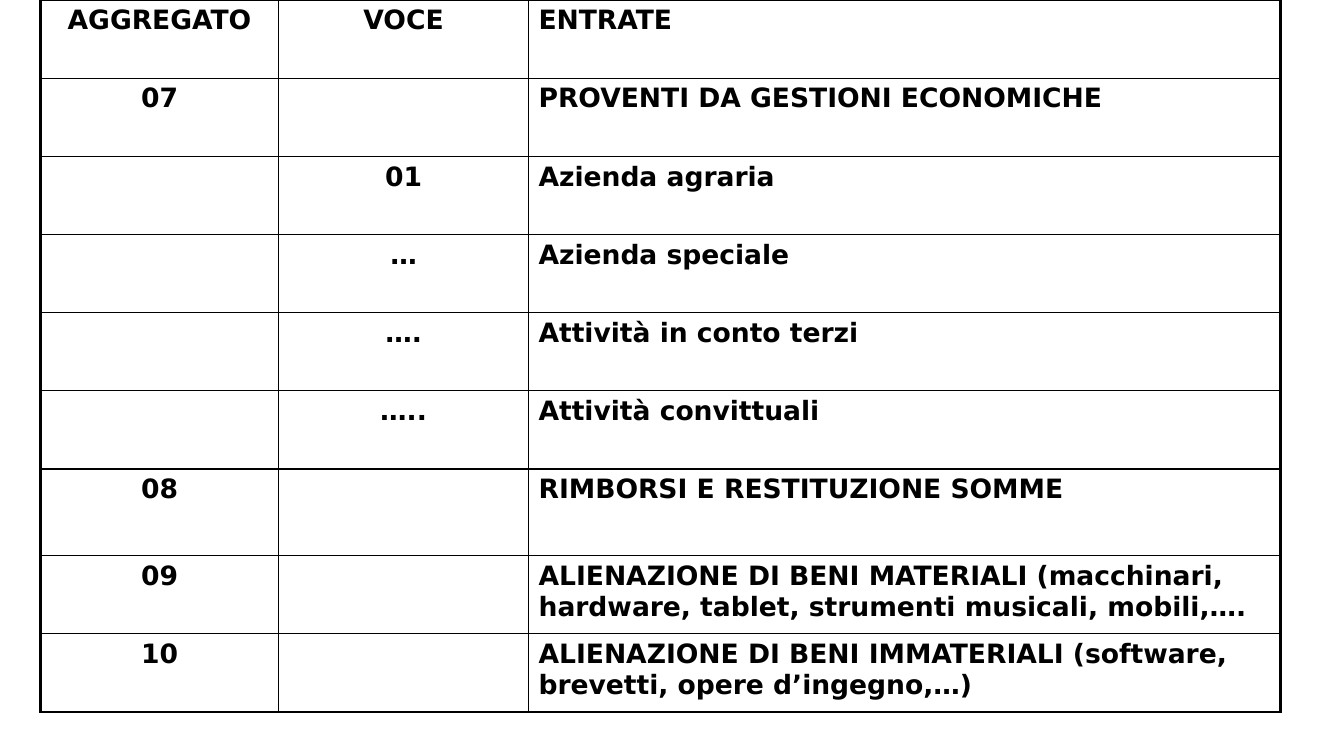
from lxml import etree
from pptx import Presentation
from pptx.dml.color import RGBColor
from pptx.enum.text import PP_ALIGN
from pptx.oxml.ns import qn
from pptx.util import Cm, Pt

CENTER = PP_ALIGN.CENTER
LEFT = PP_ALIGN.LEFT
BLACK = RGBColor(0x00, 0x00, 0x00)
WHITE = RGBColor(0xFF, 0xFF, 0xFF)

ENTRIES = [
    ("AGGREGATO", "VOCE", "ENTRATE"),
    ("07", "", "PROVENTI DA GESTIONI ECONOMICHE"),
    ("", "01", "Azienda agraria"),
    ("", "…", "Azienda speciale"),
    ("", "….", "Attività in conto terzi"),
    ("", "…..", "Attività convittuali"),
    ("08", "", "RIMBORSI E RESTITUZIONE SOMME"),
    ("09", "", "ALIENAZIONE DI BENI MATERIALI (macchinari, hardware, "
               "tablet, strumenti musicali, mobili,…."),
    ("10", "", "ALIENAZIONE DI BENI IMMATERIALI (software, brevetti, "
               "opere d’ingegno,…)"),
]
COLUMN_WIDTHS = [6, 6.3, 18.95]
ALIGNMENTS = [CENTER, CENTER, LEFT]
ROW_HEIGHT = 1.97
REFUNDS_ROW, REFUNDS_HEIGHT = 6, 2.18


class SlideBuilder:
    font_name = "DejaVu Sans"
    font_size = Pt(19)
    inner_line = Pt(1)
    outer_line = Pt(2.25)

    def __init__(self, slide):
        self.slide = slide

    def borders(self, cell, outer_sides):
        properties = cell._tc.get_or_add_tcPr()
        for position, side in enumerate("LRTB"):
            width = self.outer_line if side in outer_sides else self.inner_line
            line = etree.Element(qn(f"a:ln{side}"), w=str(int(width)))
            fill = etree.SubElement(line, qn("a:solidFill"))
            etree.SubElement(fill, qn("a:srgbClr"), val=str(BLACK))
            properties.insert(position, line)

    def cell(self, cell, text, alignment, outer_sides):
        cell.fill.solid()
        cell.fill.fore_color.rgb = WHITE
        self.borders(cell, outer_sides)
        cell.text_frame.text = text
        paragraph = cell.text_frame.paragraphs[0]
        paragraph.alignment = alignment
        font = paragraph.font
        for run in paragraph.runs:
            font = run.font
            font.name = self.font_name
            font.bold = True
            font.color.rgb = BLACK
        font.size = self.font_size

    def table(self, left, top, widths, heights, entries):
        table = self.slide.shapes.add_table(
            len(heights), len(widths), Cm(left), Cm(top),
            Cm(sum(widths)), Cm(sum(heights))).table
        table.first_row = False
        table.horz_banding = False
        for column, width in zip(table.columns, widths):
            column.width = Cm(width)
        for row, height in zip(table.rows, heights):
            row.height = Cm(height)
        last_row, last_column = len(heights) - 1, len(widths) - 1
        for r, entry in enumerate(entries):
            for c, text in enumerate(entry):
                edges = {"L": c == 0, "R": c == last_column,
                         "T": r == 0, "B": r == last_row}
                outer_sides = [side for side, outer in edges.items() if outer]
                self.cell(table.cell(r, c), text, ALIGNMENTS[c], outer_sides)


def main():
    presentation = Presentation()
    presentation.slide_width = Cm(33.87)
    presentation.slide_height = Cm(19.05)
    builder = SlideBuilder(
        presentation.slides.add_slide(presentation.slide_layouts[6]))
    heights = [ROW_HEIGHT] * len(ENTRIES)
    heights[REFUNDS_ROW] = REFUNDS_HEIGHT
    builder.table(1.02, 0, COLUMN_WIDTHS, heights, ENTRIES)
    presentation.save("out.pptx")


if __name__ == "__main__":
    main()
